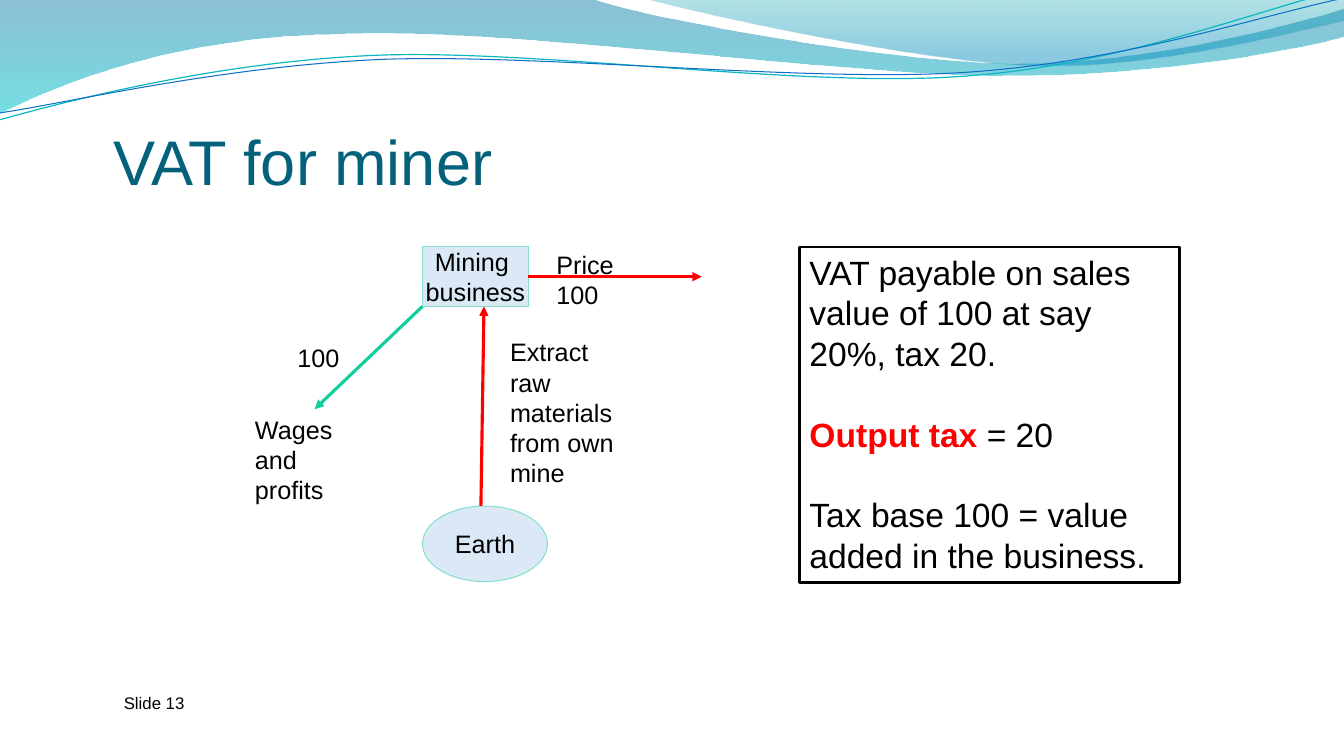
from dataclasses import dataclass

from lxml.etree import SubElement
from pptx import Presentation
from pptx.dml.color import RGBColor
from pptx.enum.shapes import MSO_CONNECTOR, MSO_SHAPE
from pptx.enum.text import MSO_ANCHOR, MSO_AUTO_SIZE, PP_ALIGN
from pptx.oxml.ns import qn
from pptx.util import Emu, Inches, Pt

WIDTH, HEIGHT = Inches(13.33), Inches(7.5)
COLUMN, ROW = WIDTH / 133.3, HEIGHT / 75
FONT, BLACK, RED, GREEN = "Arial", "000000", "FF0000", "10CF9B"


@dataclass(frozen=True)
class Run:
    text: str
    color: str = BLACK
    bold: bool = False


@dataclass(frozen=True)
class Stop:
    position: float
    color: str
    alpha: int


@dataclass(frozen=True)
class Wave:
    start: tuple
    segments: tuple
    stops: tuple = ()
    line: str = ""
    weight: float = 0


@dataclass(frozen=True)
class Node:
    preset: MSO_SHAPE
    box: tuple
    lines: tuple


@dataclass(frozen=True)
class Label:
    text: str
    box: tuple
    size: float = 18


@dataclass(frozen=True)
class Arrow:
    start: tuple
    end: tuple
    color: str
    source: str = ""


WAVES = (
    Wave((0, 0), ((58.7, -0.1), (63.4, 1.7, 88.5, 6.3, 101.1, 6.3),
                  (113.8, 6.3, 127.8, 2.6, 133.3, 0.9), (133.5, 3.6),
                  (131.1, 4.4, 116, 7.6, 99.4, 7.5), (82.9, 7.5, 50.9, 2.8, 34.3, 3.4),
                  (17.2, 3.6, 6.1, 8.3, -0.1, 11.3)),
         stops=(Stop(0, "0074A1", 45), Stop(1, "00C6CF", 55))),
    Wave((63.9, -0.1), ((67.9, 1.1, 90.9, 6.2, 102.5, 6.5),
                        (114.1, 6.9, 128.2, 3.2, 133.3, 2.1), (133.3, 0)),
         stops=(Stop(0, "00A1A9", 30), Stop(0.8, "008BBF", 45))),
    Wave((-0.1, 11.9), ((6.4, 10.1, 21.1, 6.2, 36.9, 5.5), (52.7, 4.8, 79, 8.7, 95, 7.6),
                        (111, 6.6, 125.2, 0.8, 133.1, -1)), line="0AB8BF", weight=0.85),
    Wave((0, 11.2), ((6.3, 10.3, 21.8, 6.6, 37.8, 5.9), (53.7, 5.3, 79.6, 8.2, 95.5, 7.2),
                     (111.5, 6.2, 125.5, 1.4, 133.4, -0.2)), line="0F6FC6", weight=0.75),
)
NODES = (
    Node(MSO_SHAPE.RECTANGLE, (41.9, 24.5, 10.5, 5.9), ("Mining ", "business")),
    Node(MSO_SHAPE.OVAL, (41.9, 50.2, 12.4, 7.5), ("Earth",)),
)
ARROWS = (
    Arrow((47.7, 50.2), (48, 30.4), RED),
    Arrow((52.4, 27.5), (69.6, 27.45), RED, source="business"),
    Arrow((41.9, 30.4), (31.2, 40.6), GREEN),
)
LABELS = (
    Label("Extract raw materials from own mine", (49.6, 32.9, 14.2, 16.2)),
    Label("Price 100", (54.2, 24.2, 10.3, 7.1)),
    Label("Wages and profits", (24.3, 40.6, 11.2, 10.1)),
    Label("100", (28.5, 33.5, 6.2, 4)),
    Label("Slide 13", (11.3, 68.2, 23.3, 4), size=12),
)
TAX_NOTE = (
    (Run("VAT payable on sales value of 100 at say 20%, tax 20."),),
    (Run("Output tax", RED, True), Run(" = 20")),
    (Run("Tax base 100 = value added in the business."),),
)


def rgb(color: str) -> RGBColor:
    """Turn a hex string into a colour."""
    return RGBColor.from_string(color)


def point(column: float, row: float) -> tuple:
    """Turn grid coordinates into slide lengths."""
    return Emu(round(column * COLUMN)), Emu(round(row * ROW))


def frame(box: tuple) -> tuple:
    """Turn a grid box into left, top, width and height."""
    return point(*box[:2]) + point(*box[2:])


def set_alpha(shape, *alphas: int) -> None:
    """Make the fill colours of a shape partly transparent."""
    for color, alpha in zip(list(shape.element.spPr.iter(qn("a:srgbClr"))), alphas):
        SubElement(color, qn("a:alpha")).set("val", str(alpha * 1000))


def write_text(shape, paragraphs, *, size=18, align=PP_ALIGN.LEFT, anchor=MSO_ANCHOR.TOP,
               insets=(0.1, 0.05, 0.1, 0.05), wrap=True, gap=0) -> None:
    """Fill a shape with paragraphs, each a tuple of runs."""
    text_frame = shape.text_frame
    text_frame.auto_size = MSO_AUTO_SIZE.NONE
    text_frame.word_wrap, text_frame.vertical_anchor = wrap, anchor
    (text_frame.margin_left, text_frame.margin_top,
     text_frame.margin_right, text_frame.margin_bottom) = map(Inches, insets)
    for index, runs in enumerate(paragraphs):
        paragraph = text_frame.add_paragraph() if index else text_frame.paragraphs[0]
        paragraph.alignment = align
        paragraph.space_before = Pt(gap if index else 0)
        for part in runs:
            run = paragraph.add_run()
            run.text = part.text
            run.font.name, run.font.size, run.font.bold = FONT, Pt(size), part.bold
            run.font.color.rgb = rgb(part.color)


def bend_segments(shape, segments: tuple) -> None:
    """Merge each three straight steps of a curved segment into one cubic curve."""
    outline = next(shape.element.spPr.iter(qn("a:path")))
    steps = iter(outline.findall(qn("a:lnTo")))
    for segment in segments:
        first = next(steps)
        if len(segment) == 6:
            first.tag = qn("a:cubicBezTo")
            for step in (next(steps), next(steps)):
                first.append(step[0])
                outline.remove(step)


def draw_wave(slide, wave: Wave) -> None:
    """Draw a filled band or a thin curve of the header."""
    points = [point(*segment[index:index + 2])
              for segment in wave.segments for index in range(0, len(segment), 2)]
    builder = slide.shapes.build_freeform(*point(*wave.start), scale=1.0)
    builder.add_line_segments(points, close=bool(wave.stops))
    shape = builder.convert_to_shape()
    bend_segments(shape, wave.segments)
    shape.shadow.inherit = False
    if wave.stops:
        shape.fill.gradient()
        shape.fill.gradient_angle = 270
        for target, stop in zip(shape.fill.gradient_stops, wave.stops):
            target.color.rgb, target.position = rgb(stop.color), stop.position
        set_alpha(shape, *(stop.alpha for stop in wave.stops))
        shape.line.fill.background()
    else:
        shape.fill.background()
        shape.line.color.rgb, shape.line.width = rgb(wave.line), Pt(wave.weight)


def draw_node(slide, node: Node):
    """Draw a tinted shape with centred text."""
    shape = slide.shapes.add_shape(node.preset, *frame(node.box))
    shape.shadow.inherit = False
    shape.fill.solid()
    shape.fill.fore_color.rgb = rgb("0F6FC6")
    set_alpha(shape, 15)
    shape.line.color.rgb, shape.line.width = rgb("85DFD0"), Pt(0.75)
    write_text(shape, [(Run(line),) for line in node.lines], align=PP_ALIGN.CENTER,
               anchor=MSO_ANCHOR.MIDDLE, insets=(0.05, 0, 0.05, 0), wrap=False)
    return shape


def draw_arrow(slide, arrow: Arrow, nodes: dict) -> None:
    """Draw an arrow, joined to the right side of its source if it has one."""
    connector = slide.shapes.add_connector(
        MSO_CONNECTOR.STRAIGHT, *point(*arrow.start), *point(*arrow.end))
    if arrow.source:
        connector.begin_connect(nodes[arrow.source], 3)
    connector.line.color.rgb, connector.line.width = rgb(arrow.color), Pt(2.25)
    line = connector.element.spPr.find(qn("a:ln"))
    SubElement(line, qn("a:tailEnd")).set("type", "triangle")
    SubElement(connector.element.spPr, qn("a:effectLst"))


def main() -> None:
    """Build the slide and save it."""
    presentation = Presentation()
    presentation.slide_width, presentation.slide_height = WIDTH, HEIGHT
    slide = presentation.slides.add_slide(presentation.slide_layouts[5])
    for wave in WAVES:
        draw_wave(slide, wave)
    title = slide.shapes.title
    title.left, title.top, title.width, title.height = frame((11.3, 13.8, 68.1, 5.9))
    write_text(title, [(Run("VAT for miner", "04617B"),)], size=45,
               anchor=MSO_ANCHOR.BOTTOM, insets=(0, 0.05, 0, 0))
    nodes = {node.lines[-1]: draw_node(slide, node) for node in NODES}
    for arrow in ARROWS:
        draw_arrow(slide, arrow, nodes)
    for label in LABELS:
        write_text(slide.shapes.add_textbox(*frame(label.box)), [(Run(label.text),)],
                   size=label.size)
    note = slide.shapes.add_shape(MSO_SHAPE.RECTANGLE, *frame((79.3, 24.5, 37.7, 33.3)))
    note.shadow.inherit = False
    note.fill.background()
    note.line.color.rgb, note.line.width = rgb(BLACK), Pt(2)
    write_text(note, TAX_NOTE, size=24, gap=29)
    presentation.save("out.pptx")


if __name__ == "__main__":
    main()
